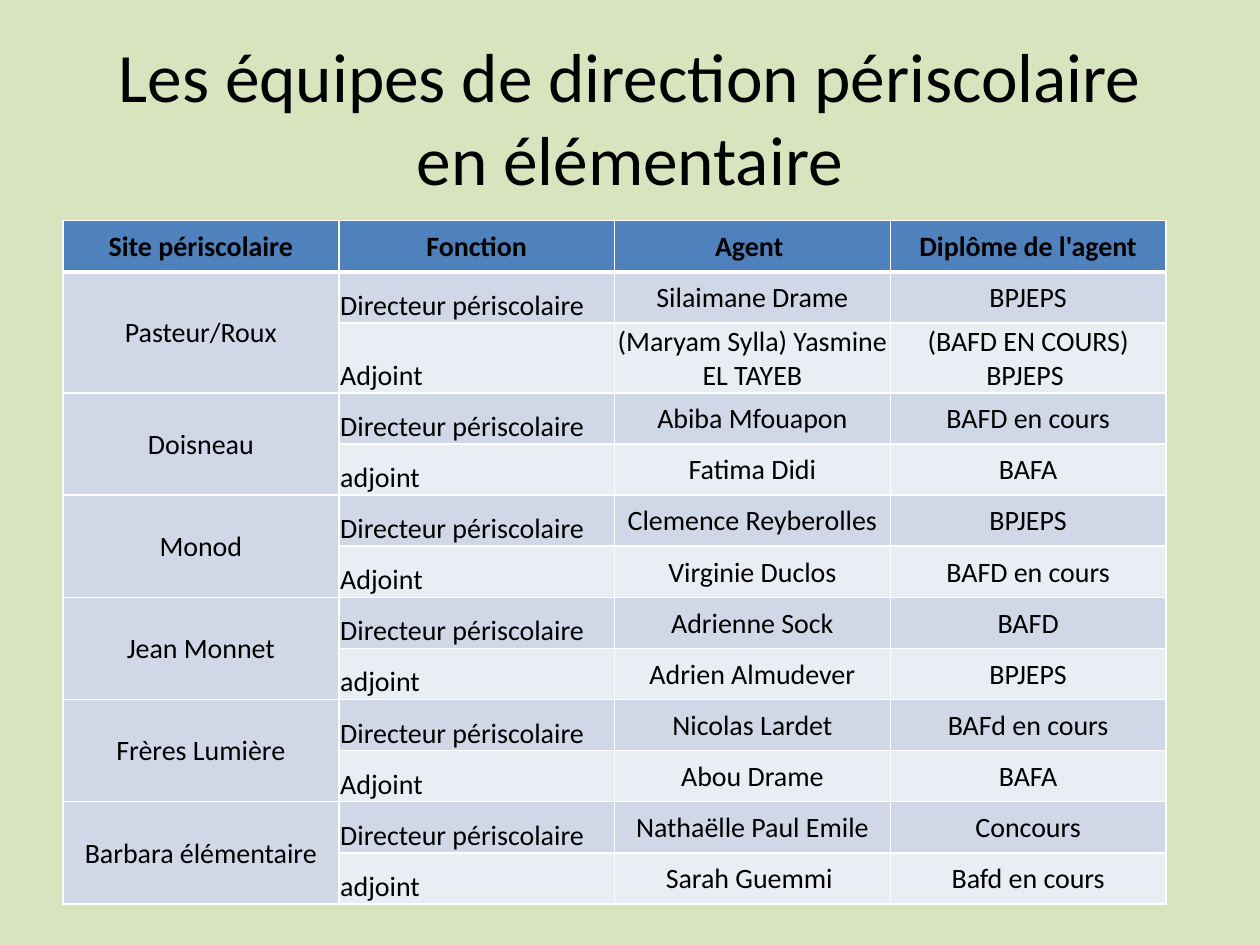
from dataclasses import dataclass
from lxml.etree import SubElement
from pptx import Presentation
from pptx.dml.color import RGBColor
from pptx.enum.text import MSO_ANCHOR, PP_ALIGN
from pptx.oxml.ns import qn
from pptx.util import Cm, Pt


@dataclass(frozen=True)
class Theme:
    font: str = "Calibri"
    page: str = "D7E4BD"
    ink: str = "000000"
    line: str = "FFFFFF"
    head: str = "4F81BD"
    odd: str = "D0D8E8"
    even: str = "E9EDF4"
    title: float = 39.6
    body: float = 16
    thin: float = 1
    thick: float = 3


theme = Theme()


def style(par, size, bold, align):
    par.alignment = align
    for run in par.runs:
        run.font.name = theme.font
        run.font.size = Pt(size)
        run.font.bold = bold
        run.font.color.rgb = RGBColor.from_string(theme.ink)


def border(cell, side, width):
    props = cell._tc.get_or_add_tcPr()
    line = SubElement(props, qn(f"a:ln{side}"), w=str(Pt(width)))
    fill = SubElement(line, qn("a:solidFill"))
    SubElement(fill, qn("a:srgbClr"), val=theme.line)


# Content: each site has a director and a deputy
heads = ["Site périscolaire", "Fonction", "Agent ", "Diplôme de l'agent"]
chief = "Directeur périscolaire"
sites = [
    ("Pasteur/Roux", "Silaimane Drame", "BPJEPS",
     "Adjoint", "(Maryam Sylla) Yasmine EL TAYEB", "(BAFD EN COURS) BPJEPS "),
    ("Doisneau", "Abiba Mfouapon", "BAFD en cours",
     "adjoint", "Fatima Didi", "BAFA"),
    ("Monod", "Clemence Reyberolles", "BPJEPS",
     "Adjoint", "Virginie Duclos", "BAFD en cours"),
    ("Jean Monnet", "Adrienne Sock", "BAFD",
     "adjoint", "Adrien Almudever", "BPJEPS"),
    ("Frères Lumière", "Nicolas Lardet", "BAFd en cours",
     "Adjoint", "Abou Drame", "BAFA"),
    ("Barbara élémentaire", "Nathaëlle Paul Emile", "Concours",
     "adjoint", "Sarah Guemmi ", "Bafd en cours"),
]
rows = [heads]
for site, lead, grade, role, aide, level in sites:
    rows += [[site, chief, lead, grade], ["", role, aide, level]]

# Slide and background
prs = Presentation()
prs.slide_width, prs.slide_height = Cm(25.4), Cm(19.05)
slide = prs.slides.add_slide(prs.slide_layouts[5])
slide.background.fill.solid()
slide.background.fill.fore_color.rgb = RGBColor.from_string(theme.page)

# Title
title = slide.shapes.title
title.left, title.top = Cm(1.27), Cm(0.76)
title.width, title.height = Cm(22.86), Cm(3.18)
frame = title.text_frame
frame.text = "Les équipes de direction périscolaire en élémentaire"
frame.vertical_anchor = MSO_ANCHOR.MIDDLE
style(frame.paragraphs[0], theme.title, False, PP_ALIGN.CENTER)

# Table grid
high = Cm(1.03)
table = slide.shapes.add_table(
    len(rows), len(heads), Cm(1.27), Cm(4.45), Cm(22.24), high * len(rows)
).table
for row in table.rows:
    row.height = high

# Table cells
for r, row in enumerate(rows):
    shade = theme.head if r == 0 else theme.odd if r % 2 else theme.even
    for c, text in enumerate(row):
        cell = table.cell(r, c)
        role = r > 0 and c == 1
        cell.text_frame.text = text
        cell.vertical_anchor = MSO_ANCHOR.BOTTOM if role else MSO_ANCHOR.MIDDLE
        cell.margin_left = cell.margin_right = cell.margin_top = Cm(0.03)
        cell.margin_bottom = 0
        style(cell.text_frame.paragraphs[0], theme.body, r == 0,
              PP_ALIGN.LEFT if role else PP_ALIGN.CENTER)
        for side in "LRTB":
            rule = (r, side) in [(0, "B"), (1, "T")]
            border(cell, side, theme.thick if rule else theme.thin)
        cell.fill.solid()
        cell.fill.fore_color.rgb = RGBColor.from_string(shade)

# One site name across its two rows
for r in range(1, len(rows), 2):
    table.cell(r, 0).merge(table.cell(r + 1, 0))

prs.save("out.pptx")
